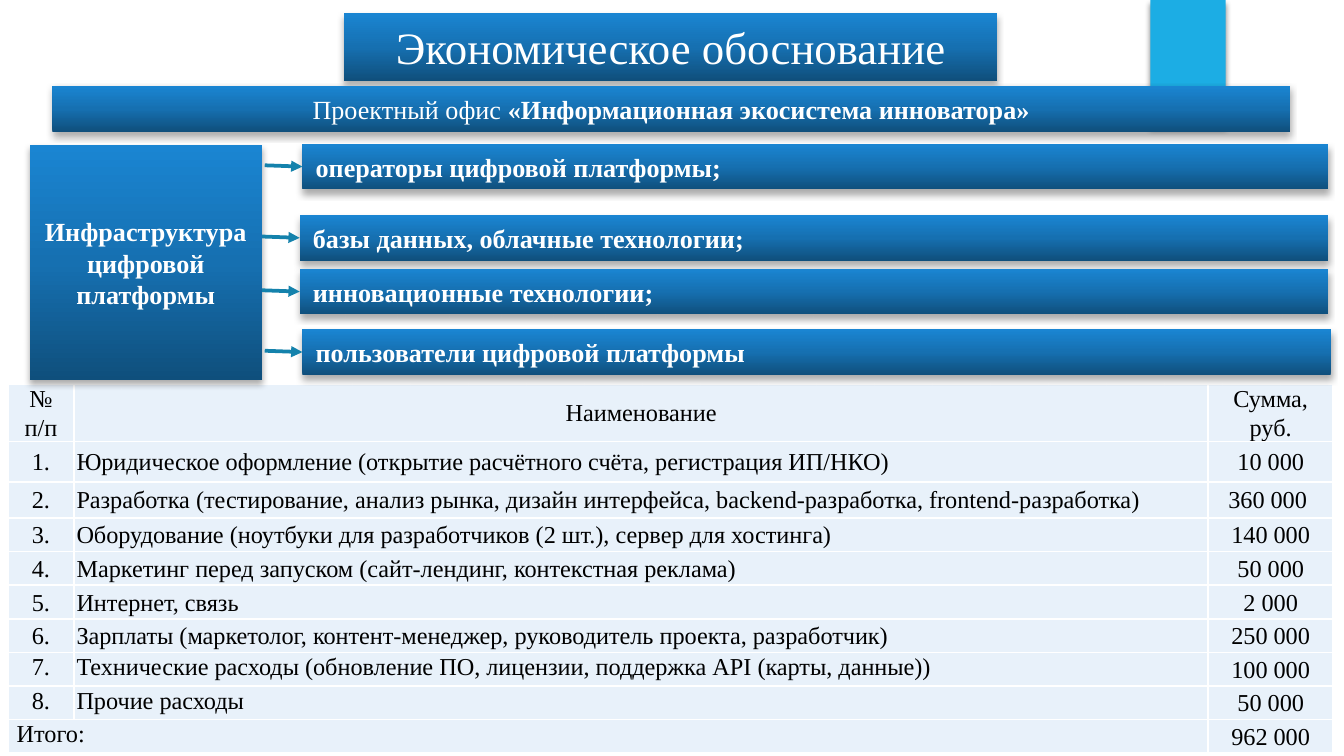
import copy

import lxml.etree
import pptx
import pptx.dml.color
import pptx.enum.shapes
import pptx.enum.text
import pptx.oxml
import pptx.oxml.ns
import pptx.util

Inches = pptx.util.Inches
Pt = pptx.util.Pt
qn = pptx.oxml.ns.qn
ALIGN = pptx.enum.text.PP_ALIGN
ANCHOR = pptx.enum.text.MSO_ANCHOR

COLORS = {
    "dark": "0F4F7C",
    "middle": "1670B1",
    "light": "1A85D2",
    "tab": "1CADE4",
    "arrow": "1482AC",
    "cell": "E8F1FA",
    "white": "FFFFFF",
    "black": "000000",
}
FONT = "Times New Roman"
ARROW_LENGTH = 0.28

BARS = [
    (2.25, 1.07, 7.63, "операторы цифровой платформы;"),
    (2.23, 1.6, 7.65, "базы данных, облачные технологии;"),
    (2.23, 2, 7.65, "инновационные технологии;"),
    (2.25, 2.45, 7.65, "пользователи цифровой платформы"),
]
COSTS = [
    ("№ п/п", "Наименование", "Сумма, руб."),
    ("1.", "Юридическое оформление (открытие расчётного счёта, регистрация ИП/НКО)", "10 000"),
    ("2.", "Разработка (тестирование, анализ рынка, дизайн интерфейса, "
           "backend-разработка, frontend-разработка)", "360 000 "),
    ("3.", "Оборудование (ноутбуки для разработчиков (2 шт.), сервер для хостинга)", "140 000"),
    ("4.", "Маркетинг перед запуском (сайт-лендинг, контекстная реклама)", "50 000"),
    ("5.", "Интернет, связь", "2 000"),
    ("6.", "Зарплаты (маркетолог, контент-менеджер, руководитель проекта, разработчик)", "250 000"),
    ("7.", "Технические расходы (обновление ПО, лицензии, поддержка API (карты, данные))", "100 000"),
    ("8.", "Прочие расходы", "50 000"),
    (" Итого:", "", "962 000"),
]
COLUMN_WIDTHS = [0.49, 8.44, 0.93]
ROW_HEIGHTS = [0.42, 0.3, 0.27] + [0.25] * 7


def rgb(name):
    return pptx.dml.color.RGBColor.from_string(COLORS[name])


def apply(target, values):
    for name, value in values.items():
        setattr(target, name, value)


class SlideBuilder:
    def __init__(self, slide):
        self.slide = slide

    def text(self, paragraph, runs, size, color, alignment):
        paragraph.alignment = alignment
        for words, bold in runs:
            run = paragraph.add_run()
            run.text = words
            apply(run.font, {"name": FONT, "size": Pt(size), "bold": bold})
            run.font.color.rgb = rgb(color)

    def shadow(self, shape, opacity, blur, distance):
        shape.shadow.inherit = False
        effects = shape._element.spPr.find(qn("a:effectLst"))
        outer = lxml.etree.SubElement(
            effects, qn("a:outerShdw"), blurRad=str(Pt(blur)), dist=str(Pt(distance)),
            dir="5400000", algn="ctr", rotWithShape="0")
        color = lxml.etree.SubElement(outer, qn("a:srgbClr"), val=COLORS["black"])
        lxml.etree.SubElement(color, qn("a:alpha"), val=str(opacity * 1000))

    def rectangle(self, left, top, width, height):
        return self.slide.shapes.add_shape(
            pptx.enum.shapes.MSO_SHAPE.RECTANGLE,
            Inches(left), Inches(top), Inches(width), Inches(height))

    def tab(self, left, top, width, height):
        shape = self.rectangle(left, top, width, height)
        shape.fill.solid()
        shape.fill.fore_color.rgb = rgb("tab")
        shape.line.fill.background()
        self.shadow(shape, 45, 3, 2)

    def gradient(self, shape):
        shape.fill.gradient()
        shape.fill.gradient_angle = 90
        stops = shape._element.spPr.find(".//" + qn("a:gsLst"))
        stops.insert(1, copy.deepcopy(stops[0]))
        for stop, position, color in zip(
                shape.fill.gradient_stops, (0, 0.5, 1), ("dark", "middle", "light")):
            stop.position = position
            stop.color.rgb = rgb(color)

    def panel(self, shape, runs, size=14, alignment=ALIGN.CENTER):
        self.gradient(shape)
        shape.line.fill.background()
        self.shadow(shape, 32, 3.5, 2.2)
        apply(shape.text_frame, {
            "word_wrap": True,
            "auto_size": pptx.enum.text.MSO_AUTO_SIZE.NONE,
            "vertical_anchor": ANCHOR.MIDDLE,
        })
        self.text(shape.text_frame.paragraphs[0], runs, size, "white", alignment)
        return shape

    def title(self, left, top, width, height, words):
        shape = self.slide.shapes.title
        apply(shape, {"left": Inches(left), "top": Inches(top),
                      "width": Inches(width), "height": Inches(height)})
        self.panel(shape, [(words, False)], 24)

    def arrow_to(self, shape):
        center = shape.top + shape.height // 2
        connector = self.slide.shapes.add_connector(
            pptx.enum.shapes.MSO_CONNECTOR.STRAIGHT,
            shape.left - Inches(ARROW_LENGTH), center - Inches(0.01), shape.left, center)
        connector.end_connect(shape, 1)
        connector.line.color.rgb = rgb("arrow")
        connector.line.width = Pt(2)
        lxml.etree.SubElement(connector.line._get_or_add_ln(), qn("a:tailEnd"), type="triangle")
        lxml.etree.SubElement(connector._element.spPr, qn("a:effectLst"))

    def cell(self, cell, words, alignment, values):
        properties = cell._tc.get_or_add_tcPr()
        for side in ("lnL", "lnR", "lnT", "lnB"):
            border = lxml.etree.SubElement(properties, qn("a:" + side), w=str(Pt(1)))
            fill = lxml.etree.SubElement(border, qn("a:solidFill"))
            lxml.etree.SubElement(fill, qn("a:srgbClr"), val=COLORS["white"])
        cell.fill.solid()
        cell.fill.fore_color.rgb = rgb("cell")
        apply(cell, values)
        if words:
            paragraph = cell.text_frame.paragraphs[0]
            paragraph.line_spacing = 1.07
            self.text(paragraph, [(words, False)], 13, "black", alignment)

    def cost_table(self, left, top):
        rows, columns = len(ROW_HEIGHTS), len(COLUMN_WIDTHS)
        table = self.slide.shapes.add_table(
            rows, columns, Inches(left), Inches(top),
            Inches(sum(COLUMN_WIDTHS)), Inches(sum(ROW_HEIGHTS))).table
        apply(table, {"first_row": False, "horz_banding": False})
        for column, width in zip(table.columns, COLUMN_WIDTHS):
            column.width = Inches(width)
        for row, height in zip(table.rows, ROW_HEIGHTS):
            row.height = Inches(height)
        last = rows - 1
        for row, record in enumerate(COSTS):
            for column, words in enumerate(record):
                is_name = (column == 1 and row > 0) or (row == last and column == 0)
                at_top = column < 2 and row >= 7
                values = {
                    "margin_left": Inches(0.02),
                    "margin_right": Inches(0.02),
                    "margin_top": 0,
                    "margin_bottom": 0,
                    "vertical_anchor": ANCHOR.TOP if at_top else ANCHOR.MIDDLE,
                }
                self.cell(table.cell(row, column), words,
                          ALIGN.JUSTIFY if is_name else ALIGN.CENTER, values)
        table.cell(last, 0).merge(table.cell(last, 1))


def main():
    presentation = pptx.Presentation()
    presentation.slide_width = Inches(10)
    presentation.slide_height = Inches(10) * 9 // 16
    builder = SlideBuilder(presentation.slides.add_slide(presentation.slide_layouts[5]))

    builder.tab(8.56, 0, 0.56, 0.94)
    builder.cost_table(0.06, 2.86)
    builder.title(2.56, 0.1, 4.86, 0.5, "Экономическое обоснование")
    builder.panel(builder.rectangle(0.39, 0.64, 9.21, 0.34), [
        ("Проектный офис ", False), ("«Информационная экосистема инноватора»", True)])
    builder.panel(builder.rectangle(0.22, 1.08, 1.73, 1.75),
                  [("Инфраструктура цифровой платформы", True)])
    for left, top, width, words in BARS:
        bar = builder.panel(builder.rectangle(left, top, width, 0.34),
                            [(words, True)], alignment=ALIGN.LEFT)
        builder.arrow_to(bar)

    presentation.save("out.pptx")


if __name__ == "__main__":
    main()
